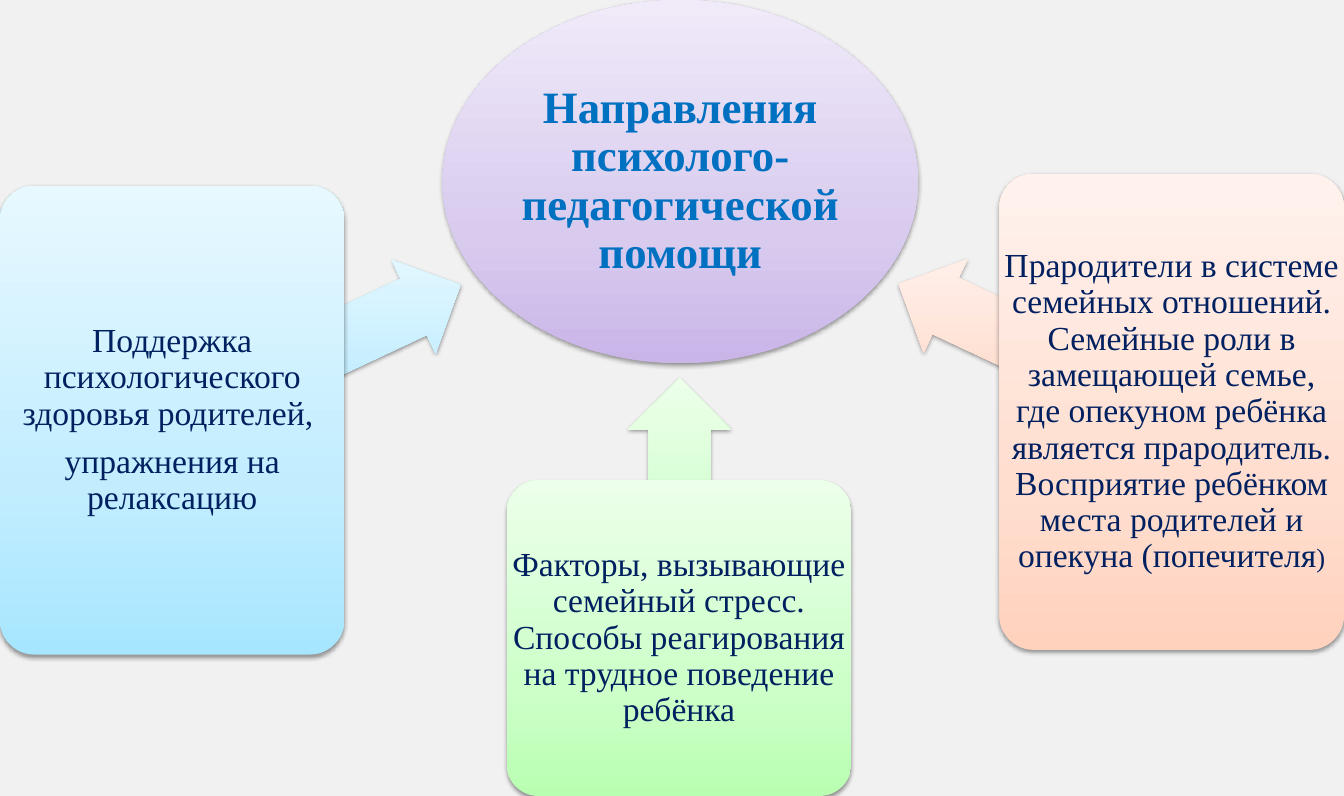
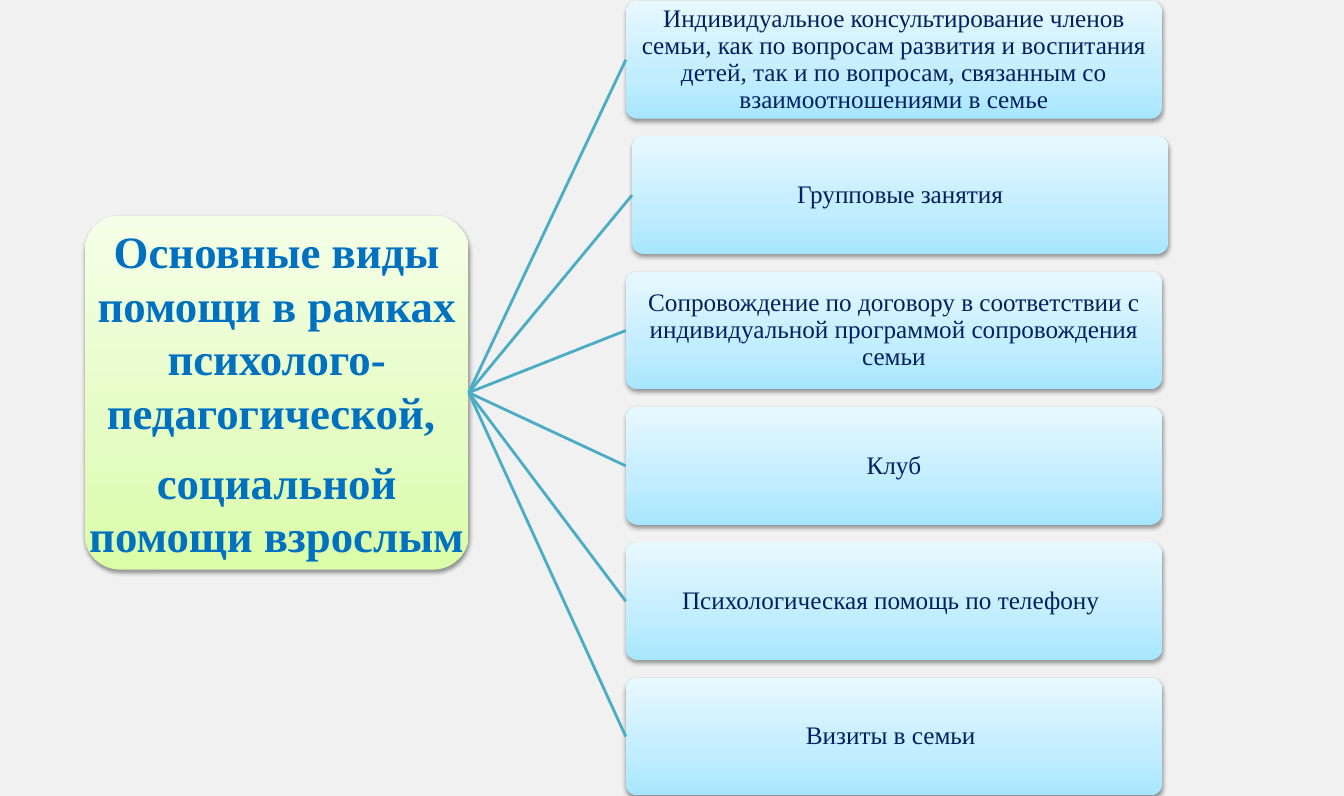
"""Builds two diagram slides on psychological and pedagogical help for families."""
from copy import deepcopy
from math import atan2, cos, degrees, sin

from lxml.etree import SubElement
from pptx import Presentation
from pptx.dml.color import RGBColor
from pptx.enum.shapes import MSO_CONNECTOR, MSO_SHAPE
from pptx.enum.text import MSO_ANCHOR, PP_ALIGN
from pptx.oxml.ns import qn
from pptx.util import Pt

THEME = {
    "font": "Times New Roman",
    "background": "F1F1F1",
    "heading": {"size": 32, "color": "0070C0", "bold": True, "inset": 1.5},
    "card": {"size": 24, "color": "002060", "bold": False, "inset": 3.6},
    "row": {"size": 18, "color": "002060", "bold": False, "inset": 0.7},
    "small": 19,
    "line": "4BACC6",
    "line_width": 2,
    "space_after": 0.35,
    "corner": 0.1,
    "stops": (0, 0.35, 1),
    "violet": ("C9B5E8", "D8CBEE", "F0EAF9"),
    "blue": ("A7E6FF", "C1EDFF", "E7F8FF"),
    "green": ("B9FFB2", "CDFFC9", "ECFFEA"),
    "peach": ("FFD2BD", "FFDED0", "FFF2ED"),
    "lime": ("DAFDA7", "E4FCC2", "F5FFE7"),
}
SLIDE_SIZE = (960, 568.37)

HUB = ((316, 0, 339.8, 259.4), ["Направления психолого-педагогической помощи"])
ARROW_HEIGHT = 74
CARDS = [
    {"at": (0, 132.6, 246, 334.8), "colors": "blue", "arrow": 227.5,
     "text": ["Поддержка психологического здоровья родителей, ",
              "упражнения на релаксацию"]},
    {"at": (362, 343, 246, 225.37), "colors": "green", "arrow": 185.8,
     "text": ["Факторы, вызывающие семейный стресс. "
              "Способы реагирования на трудное поведение ребёнка"]},
    {"at": (713.8, 124.1, 246.2, 340), "colors": "peach", "arrow": 215.3,
     "text": [[("Прародители в системе семейных отношений. "
                "Семейные роли в замещающей семье, где опекуном ребёнка "
                "является прародитель. Восприятие ребёнком места родителей "
                "и опекуна (попечителя", None), (")", THEME["small"])]]},
]

ROOT = ((60.5, 154, 274.3, 252.7),
        ["Основные виды помощи в рамках психолого-педагогической, ",
         "социальной помощи взрослым "])
ROW_TOP, ROW_PITCH, ROW_WIDTH, ROW_HEIGHT = 0.6, 96.65, 383, 84.2
ROWS = [
    (447, "Индивидуальное консультирование членов семьи, как по вопросам "
          "развития и воспитания детей, так и по вопросам, связанным со "
          "взаимоотношениями в семье"),
    (451.5, "Групповые занятия"),
    (447, "Сопровождение по договору в соответствии с индивидуальной "
          "программой сопровождения семьи"),
    (447, "Клуб"),
    (447, "Психологическая помощь по телефону "),
    (447, "Визиты в семьи "),
]


def rgb(name):
    return RGBColor.from_string(name)


def points(values):
    return [Pt(value) for value in values]


def center(at):
    left, top, width, height = at
    return left + width / 2, top + height / 2


def add_page(deck):
    page = deck.slides.add_slide(deck.slide_layouts[6])
    page.background.fill.solid()
    page.background.fill.fore_color.rgb = rgb(THEME["background"])
    return page


def add_gradient_shape(shapes, kind, at, colors):
    shape = shapes.add_shape(kind, *points(at))
    shape.line.fill.background()
    shape.fill.gradient()
    shape.fill.gradient_angle = 90
    properties = shape._element.spPr
    gradient = properties.find(qn("a:gradFill"))
    gradient.set("rotWithShape", "0")
    stop_list = gradient.find(qn("a:gsLst"))
    stop_list.insert(1, deepcopy(stop_list[0]))
    for stop, position, color in zip(shape.fill.gradient_stops, THEME["stops"], THEME[colors]):
        stop.position = position
        stop.color.rgb = rgb(color)
    shape.shadow.inherit = False
    shadow = SubElement(properties.find(qn("a:effectLst")), qn("a:outerShdw"),
                        blurRad=str(Pt(3.1)), dist=str(Pt(1.6)), dir="5400000",
                        rotWithShape="0")
    black = SubElement(shadow, qn("a:srgbClr"), val="000000")
    SubElement(black, qn("a:alpha"), val="38000")
    return shape


def add_caption(shapes, at, paragraphs, style, spacing):
    look = THEME[style]
    frame = shapes.add_textbox(*points(at)).text_frame
    frame.word_wrap = True
    frame.vertical_anchor = MSO_ANCHOR.MIDDLE
    frame.margin_left = frame.margin_right = Pt(look["inset"])
    frame.margin_top = frame.margin_bottom = Pt(look["inset"])
    for index, content in enumerate(paragraphs):
        para = frame.add_paragraph() if index else frame.paragraphs[0]
        para.alignment = PP_ALIGN.CENTER
        para.line_spacing = spacing
        para.space_after = Pt(look["size"] * THEME["space_after"])
        spans = [(content, None)] if isinstance(content, str) else content
        for text, size in spans:
            span = para.add_run()
            span.text = text
            span.font.name = THEME["font"]
            span.font.size = Pt(size or look["size"])
            span.font.bold = look["bold"]
            span.font.color.rgb = rgb(look["color"])


def add_block(page, at, paragraphs, colors, style,
              kind=MSO_SHAPE.ROUNDED_RECTANGLE, spacing=0.9):
    group = page.shapes.add_group_shape()
    box = add_gradient_shape(group.shapes, kind, at, colors)
    if kind == MSO_SHAPE.ROUNDED_RECTANGLE:
        box.adjustments[0] = THEME["corner"]
    add_caption(group.shapes, at, paragraphs, style, spacing)
    return box


def add_arrow(page, source, target, length, colors):
    angle = atan2(target[1] - source[1], target[0] - source[0])
    left = source[0] + (cos(angle) - 1) * length / 2
    top = source[1] + sin(angle) * length / 2 - ARROW_HEIGHT / 2
    arrow = add_gradient_shape(page.shapes, MSO_SHAPE.RIGHT_ARROW,
                               (left, top, length, ARROW_HEIGHT), colors)
    arrow.adjustments[0] = 0.6
    arrow.adjustments[1] = 0.5
    arrow.rotation = degrees(angle) % 360


def add_branch(page, root, box):
    branch = page.shapes.add_connector(MSO_CONNECTOR.STRAIGHT, 0, 0, 0, 0)
    branch.begin_connect(root, 3)
    branch.end_connect(box, 1)
    branch.line.color.rgb = rgb(THEME["line"])
    branch.line.width = Pt(THEME["line_width"])
    SubElement(branch._element.spPr, qn("a:effectLst"))


def build_directions(deck):
    page = add_page(deck)
    hub_at, hub_text = HUB
    add_block(page, hub_at, hub_text, "violet", "heading", MSO_SHAPE.OVAL)
    for card in CARDS:
        add_arrow(page, center(card["at"]), center(hub_at), card["arrow"], card["colors"])
        add_block(page, card["at"], card["text"], card["colors"], "card")


def build_help_types(deck):
    page = add_page(deck)
    root_at, root_text = ROOT
    root = add_block(page, root_at, root_text, "lime", "heading", spacing=1.0)
    for index, (left, text) in enumerate(ROWS):
        at = (left, ROW_TOP + index * ROW_PITCH, ROW_WIDTH, ROW_HEIGHT)
        box = add_block(page, at, [text], "blue", "row")
        add_branch(page, root, box)


def main():
    deck = Presentation()
    deck.slide_width, deck.slide_height = points(SLIDE_SIZE)
    build_directions(deck)
    build_help_types(deck)
    deck.save("out.pptx")


if __name__ == "__main__":
    main()
